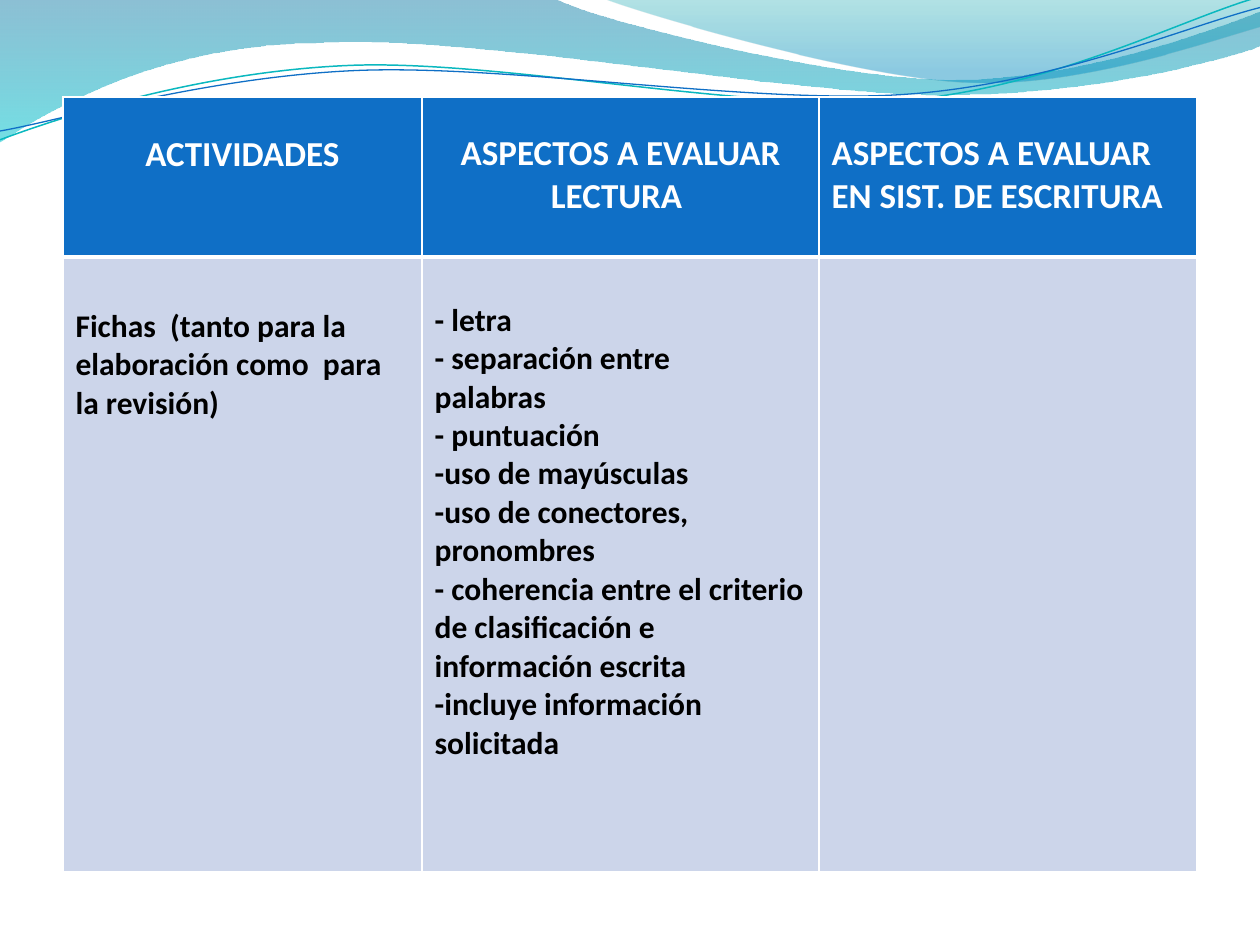
from lxml import etree
from pptx import Presentation
from pptx.dml.color import RGBColor
from pptx.enum import text
from pptx.oxml import ns
from pptx.util import Inches, Pt

COLORS = {
    "white": "FFFFFF", "black": "000000", "header": "0F6FC6", "body": "CCD5EA",
    "teal": "0AB8BF", "deep": "0074A1", "cyan": "00C6CF", "green": "00A1A9", "sky": "008BBF",
}


def rgb(name):
    return RGBColor.from_string(COLORS[name])


def add_curve(s, start, segments, close):
    pts = [(Inches(x), Inches(y)) for seg in segments for x, y in zip(seg[::2], seg[1::2])]
    builder = s.shapes.build_freeform(Inches(start[0]), Inches(start[1]))
    builder.add_line_segments(pts, close=close)
    sp = builder.convert_to_shape()
    sp.shadow.inherit = False
    steps = iter(list(sp._element.iter(ns.qn("a:lnTo"))))
    for seg in segments:
        step = next(steps)
        if len(seg) == 6:
            step.addprevious(etree.Element(ns.qn("a:cubicBezTo")))
            bezier = step.getprevious()
            for part in (step, next(steps), next(steps)):
                bezier.append(part[0])
                part.getparent().remove(part)
    return sp


prs = Presentation()
prs.slide_width, prs.slide_height = Inches(10), Inches(7.5)
s = prs.slides.add_slide(prs.slide_layouts[6])

bands = [
    ((0, -0.01),
     [(4.4, -0.01), (4.76, 0.17, 6.64, 0.63, 7.58, 0.63), (8.53, 0.63, 9.58, 0.26, 10, 0.09),
      (10.01, 0.36), (9.83, 0.44, 8.7, 0.76, 7.46, 0.75), (6.22, 0.75, 3.82, 0.28, 2.57, 0.34),
      (1.29, 0.35, 0.46, 0.83, -0.01, 1.13)],
     [(0, "deep", 45), (1, "cyan", 55)]),
    ((4.79, -0.01),
     [(5.09, 0.11, 6.82, 0.62, 7.69, 0.65), (8.56, 0.69, 9.61, 0.32, 10, 0.21), (10, 0)],
     [(0, "green", 30), (0.8, "sky", 45)]),
]
for start, segments, stops in bands:
    sp = add_curve(s, start, segments, True)
    sp.line.fill.background()
    sp.fill.gradient()
    sp.fill.gradient_angle = 270
    for stop, (position, color, _) in zip(sp.fill.gradient_stops, stops):
        stop.position = position
        stop.color.rgb = rgb(color)
    for clr, (_, _, opacity) in zip(sp._element.spPr.iter(ns.qn("a:srgbClr")), stops):
        etree.SubElement(clr, ns.qn("a:alpha"), val=str(opacity * 1000))

waves = [
    ((0, 1.11),
     [(0.48, 0.93, 1.58, 0.57, 2.77, 0.52), (3.95, 0.47, 5.93, 0.89, 7.13, 0.8),
      (8.33, 0.71, 9.38, 0.15, 9.98, -0.02)], "teal", 0.85),
    ((0, 1.04),
     [(0.47, 0.96, 1.64, 0.61, 2.83, 0.56), (4.03, 0.51, 5.97, 0.83, 7.17, 0.75),
      (8.36, 0.67, 9.41, 0.21, 10, 0.06)], "header", 0.75),
]
for start, segments, color, width in waves:
    sp = add_curve(s, start, segments, False)
    sp.fill.background()
    sp.line.color.rgb = rgb(color)
    sp.line.width = Pt(width)

table = s.shapes.add_table(2, 3, Inches(0.5), Inches(0.77), Inches(9), Inches(6.15)).table
for col, width in zip(table.columns, (2.85, 3.15, 3)):
    col.width = Inches(width)
for row, height in zip(table.rows, (1.27, 4.88)):
    row.height = Inches(height)

center, left = text.PP_ALIGN.CENTER, text.PP_ALIGN.LEFT
rows = [
    [("ACTIVIDADES", center, 0.29),
     ("ASPECTOS A EVALUAR LECTURA ", center, 0.28),
     ("ASPECTOS A EVALUAR EN SIST. DE ESCRITURA", left, 0.28)],
    [("Fichas  (tanto para la elaboración como  para la revisión)", left, 0.4),
     ("- letra\n- separación entre\vpalabras\n- puntuación\n-uso de mayúsculas\n"
      "-uso de conectores, pronombres\n"
      "- coherencia entre el criterio de clasificación e información escrita\n"
      "-incluye información solicitada", left, 0.35),
     ("", left, 0.05)],
]
styles = [("header", "white", 20, {"L": 1, "R": 1, "T": 1, "B": 3}),
          ("body", "black", 18, {"L": 1, "R": 1, "T": 3, "B": 1})]
for r, (cells, (fill, color, size, borders)) in enumerate(zip(rows, styles)):
    for c, (words, align, top) in enumerate(cells):
        cell = table.cell(r, c)
        cell.margin_top = Inches(top)
        cell.fill.solid()
        cell.fill.fore_color.rgb = rgb(fill)
        cell.text_frame.text = words
        for p in cell.text_frame.paragraphs:
            p.alignment = align
            for run in p.runs:
                run.font.name = "Calibri"
                run.font.size = Pt(size)
                run.font.bold = True
                run.font.color.rgb = rgb(color)
        tcPr = cell._tc.get_or_add_tcPr()
        for i, (side, width) in enumerate(borders.items()):
            ln = etree.Element(ns.qn(f"a:ln{side}"), w=str(Pt(width)))
            solid = etree.SubElement(ln, ns.qn("a:solidFill"))
            etree.SubElement(solid, ns.qn("a:srgbClr"), val=COLORS["white"])
            tcPr.insert(i, ln)

prs.save("out.pptx")
